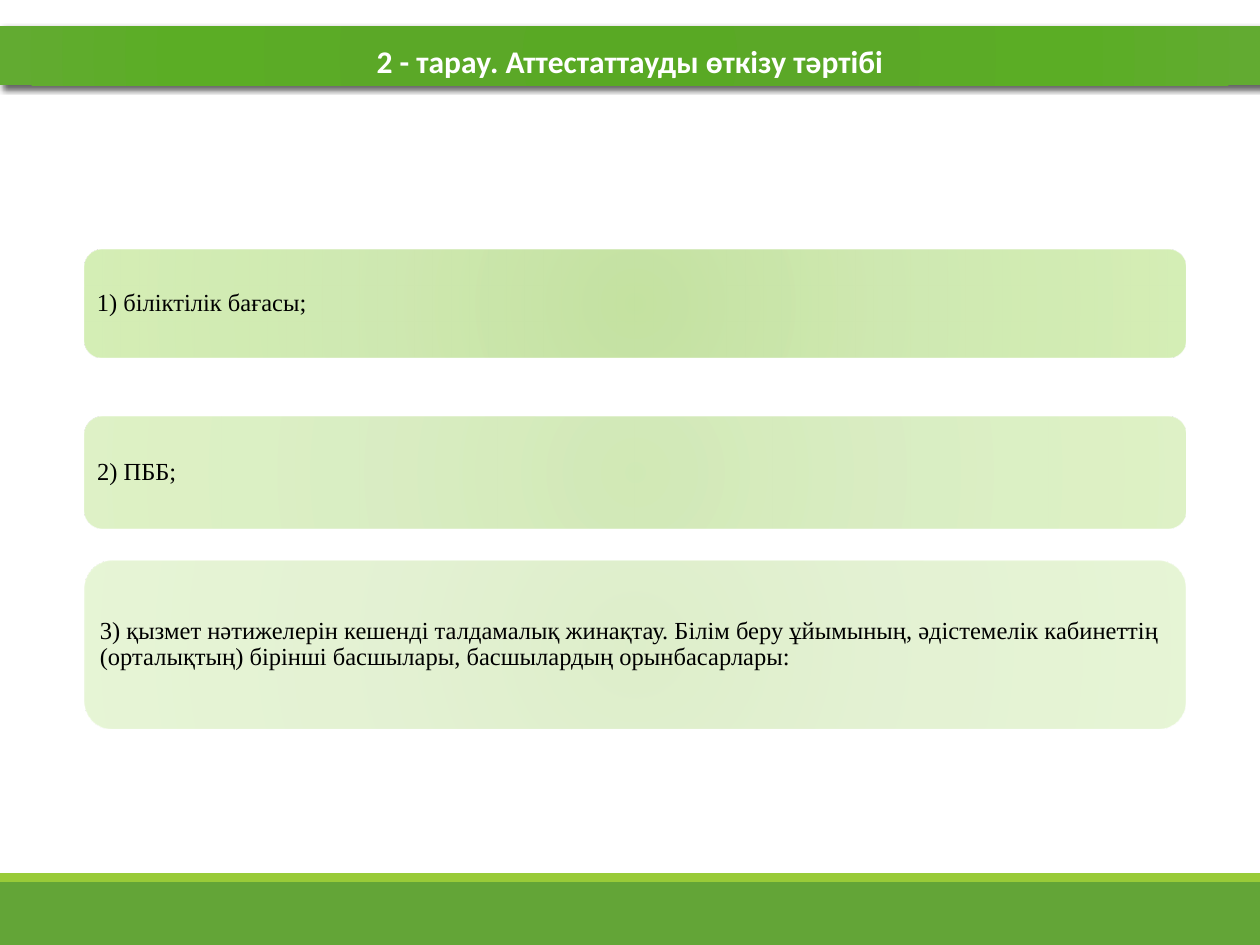
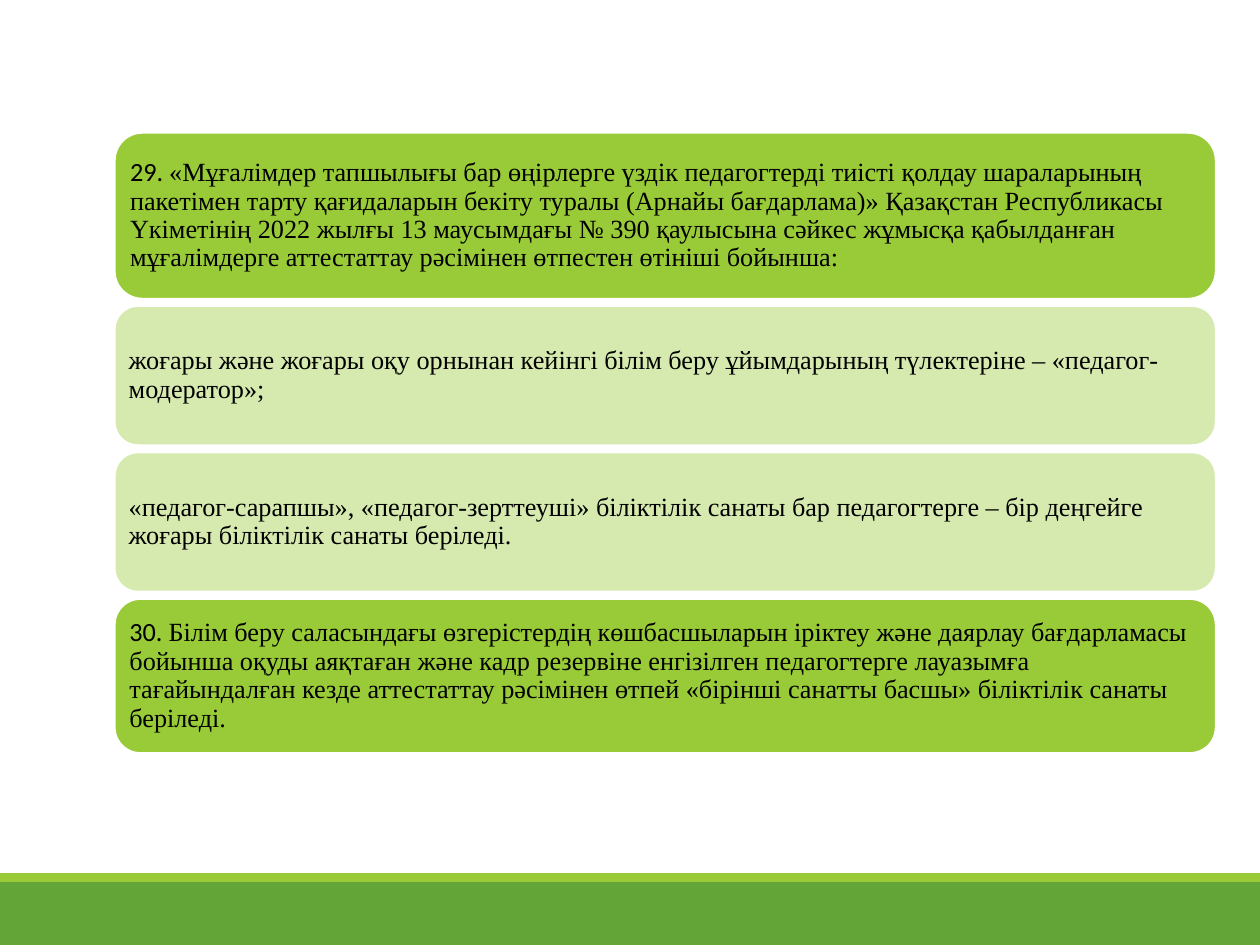
from dataclasses import dataclass

from lxml import etree
from pptx import Presentation
from pptx.dml.color import RGBColor
from pptx.enum.shapes import MSO_SHAPE
from pptx.enum.text import MSO_ANCHOR, PP_ALIGN
from pptx.oxml import parse_xml
from pptx.oxml.ns import nsdecls, qn
from pptx.util import Pt

RECT, ROUNDED = MSO_SHAPE.RECTANGLE, MSO_SHAPE.ROUNDED_RECTANGLE
MIDDLE = MSO_ANCHOR.MIDDLE
LEFT, CENTER = PP_ALIGN.LEFT, PP_ALIGN.CENTER
TITLE_ONLY, BLANK = 5, 6


@dataclass(frozen=True)
class Theme:
    green: str = "63A537"
    lime: str = "99CB38"
    pale: str = "D6EAAF"
    white: str = "FFFFFF"
    black: str = "000000"
    header_stops: tuple = ((0, "59A924"), (34, "5BA827"), (70, "5BAD25"), (100, "62AB31"))
    card_stops: tuple = ((0, "BEDF97"), (45, "CAE6A9"), (100, "D0EDAE"))
    title_font: str = "Calibri"
    body_font: str = "Times New Roman"
    title_size: int = 18
    criteria_size: int = 14
    rules_size: int = 15


theme = Theme()


def add_box(slide, kind, x, y, w, h, fill, alpha=100):
    """Add a lineless shape; fill is a hex colour or a tuple of gradient stops."""
    sp = slide.shapes.add_shape(kind, Pt(x), Pt(y), Pt(w), Pt(h))
    sp.shadow.inherit = False
    sp.line.fill.background()
    if isinstance(fill, str):
        sp.fill.solid()
        sp.fill.fore_color.rgb = RGBColor.from_string(fill)
        return sp
    sp.fill.background()
    stops = "".join(
        f'<a:gs pos="{pos * 1000}"><a:srgbClr val="{color}">'
        f'<a:alpha val="{alpha * 1000}"/></a:srgbClr></a:gs>'
        for pos, color in fill)
    gradient = parse_xml(
        f'<a:gradFill {nsdecls("a")} rotWithShape="1"><a:gsLst>{stops}</a:gsLst>'
        '<a:path path="circle"><a:fillToRect l="100000" t="100000" r="100000" b="100000"/>'
        '</a:path></a:gradFill>')
    sp_pr = sp.element.spPr
    sp_pr.replace(sp_pr.find(qn("a:noFill")), gradient)
    return sp


def write_card(sp, text, size, number=""):
    """Write left-aligned body text, with an optional number in the title font."""
    tf = sp.text_frame
    tf.word_wrap = True
    tf.vertical_anchor = MIDDLE
    tf.margin_left = tf.margin_right = tf.margin_top = tf.margin_bottom = Pt(4.2)
    p = tf.paragraphs[0]
    p.alignment = LEFT
    p.line_spacing = 0.9
    p.space_after = Pt(0.35 * size)
    p.font.name = theme.body_font
    p.font.size = Pt(size)
    p.font.color.rgb = RGBColor.from_string(theme.black)
    if number:
        r = p.add_run()
        r.text = number + " "
        r.font.name = theme.title_font
    p.add_run().text = text


prs = Presentation()
prs.slide_width, prs.slide_height = Pt(720), Pt(540)
criteria = prs.slides.add_slide(prs.slide_layouts[TITLE_ONLY])
rules = prs.slides.add_slide(prs.slide_layouts[BLANK])

# Footer bands belong to the master, behind its placeholders
master_tree = prs.slide_master.shapes.element
footer_bands = [(504, 36, theme.green), (499, 5, theme.lime)]
for i, (y, h, color) in enumerate(footer_bands):
    band = add_box(criteria, RECT, 0, y, 720, h, color).element
    band.nvSpPr.cNvPr.set("id", str(100 + i))
    master_tree.insert(2 + i, band)

# Slide 1: header band, title and three criteria
header = add_box(criteria, RECT, 0, 15.1, 720, 33.8, theme.header_stops)
effects = header.element.spPr.find(qn("a:effectLst"))
shadow = etree.SubElement(effects, qn("a:outerShdw"), blurRad=str(Pt(3.5)), dist=str(Pt(2)),
                          dir="2700000", algn="br", rotWithShape="0")
shadow_color = etree.SubElement(shadow, qn("a:srgbClr"), val=theme.black)
etree.SubElement(shadow_color, qn("a:alpha"), val="60000")
criteria.shapes.element.insert(2, header.element)

title = criteria.shapes.title
title.left, title.top, title.width, title.height = Pt(206.6), Pt(20.2), Pt(306.8), Pt(29)
tf = title.text_frame
tf.text = "2 - тарау. Аттестаттауды өткізу тәртібі"
tf.word_wrap = False
tf.vertical_anchor = MIDDLE
p = tf.paragraphs[0]
p.alignment = CENTER
p.font.name = theme.title_font
p.font.size = Pt(theme.title_size)
p.font.bold = True
p.font.color.rgb = RGBColor.from_string(theme.white)

criteria_cards = [
    (142.8, 61.2, 90, "1) біліктілік бағасы;"),
    (238.1, 64.1, 70, "2) ПББ;"),
    (320.2, 96, 50, "3) қызмет нәтижелерін кешенді талдамалық жинақтау. Білім беру ұйымының, "
     "әдістемелік кабинеттің (орталықтың) бірінші басшылары, басшылардың орынбасарлары:"),
]
for y, h, alpha, text in criteria_cards:
    sp = add_box(criteria, ROUNDED, 48.2, y, 629.4, h, theme.card_stops, alpha)
    write_card(sp, text, theme.criteria_size)

# Slide 2: stacked cards, numbered rules in lime and their cases in pale green
rule_cards = [
    (95, theme.lime, "29.",
     "«Мұғалімдер тапшылығы бар өңірлерге үздік педагогтерді тиісті қолдау шараларының "
     "пакетімен тарту қағидаларын бекіту туралы (Арнайы бағдарлама)» Қазақстан Республикасы "
     "Үкіметінің 2022 жылғы 13 маусымдағы № 390 қаулысына сәйкес жұмысқа қабылданған "
     "мұғалімдерге аттестаттау рәсімінен өтпестен өтініші бойынша:"),
    (79.7, theme.pale, "",
     "жоғары және жоғары оқу орнынан кейінгі білім беру ұйымдарының түлектеріне – "
     "«педагог-модератор»;"),
    (79.7, theme.pale, "",
     "«педагог-сарапшы», «педагог-зерттеуші» біліктілік санаты бар педагогтерге – "
     "бір деңгейге жоғары біліктілік санаты беріледі."),
    (88.2, theme.lime, "30.",
     "Білім беру саласындағы өзгерістердің көшбасшыларын іріктеу және даярлау бағдарламасы "
     "бойынша оқуды аяқтаған және кадр резервіне енгізілген педагогтерге лауазымға "
     "тағайындалған кезде аттестаттау рәсімінен өтпей «бірінші санатты басшы» біліктілік "
     "санаты беріледі."),
]
card_gap = 4
y = 75.8
for h, color, number, text in rule_cards:
    sp = add_box(rules, ROUNDED, 65.5, y, 629.3, h, color)
    sp.line.color.rgb = RGBColor.from_string(theme.white)
    sp.line.width = Pt(1.25)
    write_card(sp, text, theme.rules_size, number)
    y += h + card_gap

prs.save("out.pptx")
